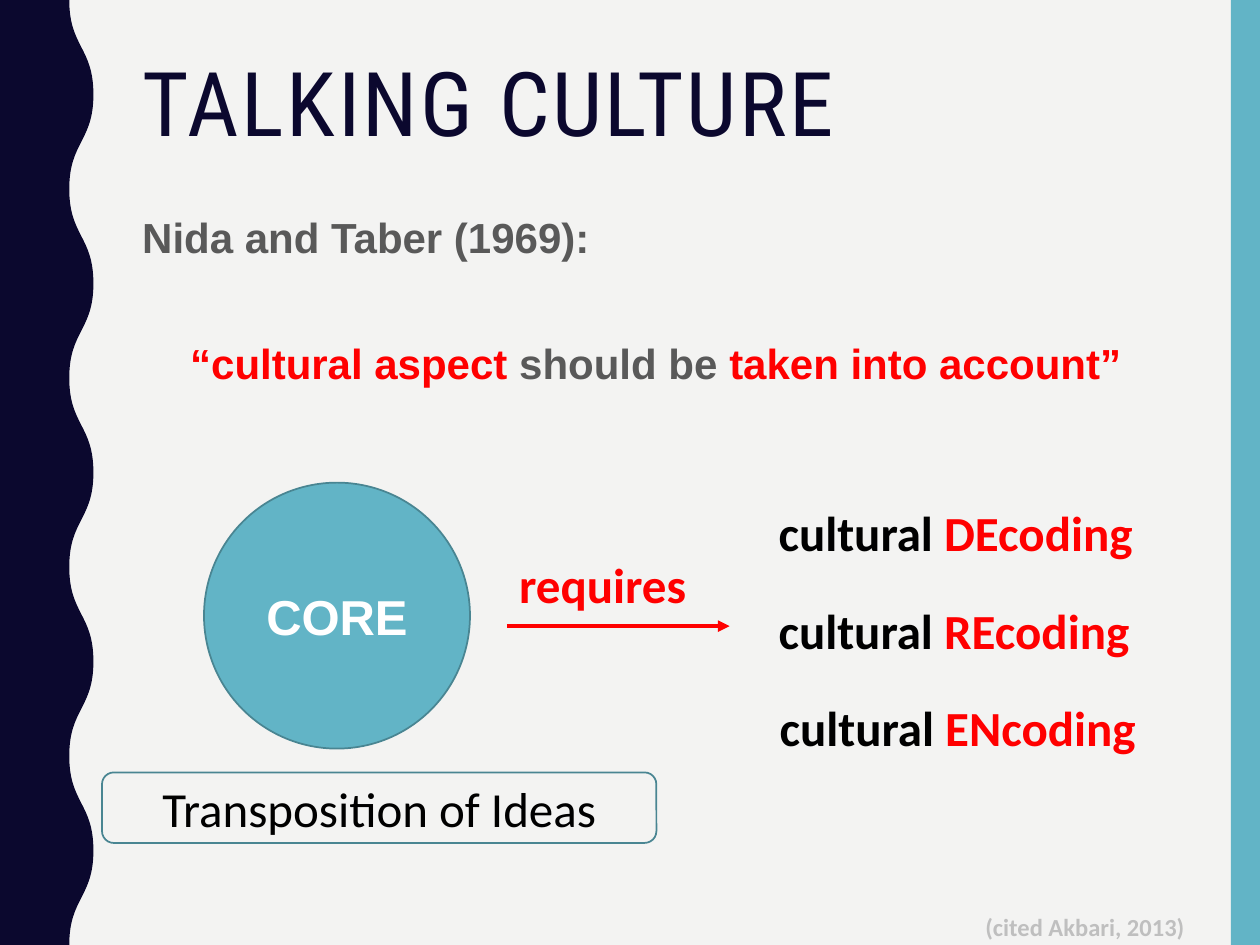
"""Build the Talking Culture slide with its wavy border and core diagram."""
from lxml import etree
from pptx import Presentation
from pptx import util as u
from pptx.dml import color
from pptx.enum import shapes, text
from pptx.oxml import ns

Pt = u.Pt
KIND = shapes.MSO_SHAPE
MID = {"alignment": text.PP_ALIGN.CENTER}
NAVY, TEAL, EDGE, RED, GREY, BLACK = "0B082E", "62B4C6", "498592", "FF0000", "595959", "000000"


def paint(part, tone):
    if hasattr(part, "solid"):
        part.solid()
        part = part.fore_color
    part.rgb = color.RGBColor.from_string(tone)


def write(para, runs, form, **style):
    for key, val in style.items():
        setattr(para, key, val)
    for words, tone in runs:
        run = para.add_run()
        run.text = words
        for key, val in form.items():
            setattr(run.font, key, val)
        paint(run.font.color, tone)


deck = Presentation()
deck.slide_width, deck.slide_height = Pt(720), Pt(540)
slide = deck.slides.add_slide(deck.slide_layouts[6])
paint(slide.background.fill, "F3F3F2")
items = slide.shapes

bar = items.add_shape(KIND.RECTANGLE, Pt(703.4), 0, Pt(16.6), Pt(540))
near, far, half = 3960, 5340, 5400
turns = [((near, far)[turn % 2], turn * half) for turn in range(11)]
pen = items.build_freeform(*turns[0], scale=Pt(1) / 100)
pen.add_line_segments(turns[1:] + [(0, 10 * half), (0, 0)], close=True)
wave = pen.convert_to_shape()
sides = list(wave._element.iter(ns.qn("a:lnTo")))
for side, start, end in zip(sides, turns, turns[1:]):
    mid = (start[1] + end[1]) // 2
    curve = etree.Element(ns.qn("a:cubicBezTo"))
    for x, y in ((start[0], mid), (end[0], mid), end):
        etree.SubElement(curve, ns.qn("a:pt"), x=str(x), y=str(y))
    side.getparent().replace(side, curve)
for part, tone in ((bar, TEAL), (wave, NAVY)):
    part.shadow.inherit = False
    paint(part.fill, tone)
    part.line.fill.background()

bold = {"name": "Calibri", "size": Pt(28), "bold": True}
arial = {"name": "Arial", "size": Pt(24), "bold": True}

title = items.add_textbox(Pt(74.2), Pt(30.2), Pt(601), Pt(117.4)).text_frame
title.word_wrap = True
write(title.paragraphs[0], [("TALKING CULTURE", NAVY)],
      {"name": "Roboto Condensed", "size": Pt(51)}, line_spacing=0.9)
title.paragraphs[0].runs[0].font._element.set("spc", "150")

body = items.add_textbox(Pt(74.2), Pt(114.5), Pt(601), Pt(283)).text_frame
body.word_wrap = True
write(body.paragraphs[0], [("Nida and Taber (1969):", GREY)], arial, line_spacing=1.1)
quote = [("“cultural aspect", RED), (" should be ", GREY), ("taken into account”", RED)]
write(body.add_paragraph(), quote, arial, line_spacing=1.1, space_before=Pt(40.6), **MID)

forms = [
    (KIND.OVAL, (116.6, 275.8, 152, 152), TEAL, ("CORE", "FFFFFF"),
     {**arial, "size": Pt(28)}),
    (KIND.ROUNDED_RECTANGLE, (58.3, 441.4, 316.8, 40.3), None,
     ("Transposition of Ideas", BLACK), {**bold, "bold": False}),
]
for kind, box, fill, run, form in forms:
    shape = items.add_shape(kind, *map(Pt, box))
    shape.shadow.inherit = False
    if fill:
        paint(shape.fill, fill)
    else:
        shape.fill.background()
    paint(shape.line.fill, EDGE)
    shape.line.width = Pt(1)
    shape.text_frame.vertical_anchor = text.MSO_ANCHOR.MIDDLE
    write(shape.text_frame.paragraphs[0], [run], form, **MID)

arrow = items.add_connector(shapes.MSO_CONNECTOR.STRAIGHT,
                            Pt(289.6), Pt(357.8), Pt(416.9), Pt(357.8))
paint(arrow.line.fill, RED)
arrow.line.width = Pt(2.25)
etree.SubElement(arrow.line._get_or_add_ln(), ns.qn("a:tailEnd"), type="triangle")
etree.SubElement(arrow._element.spPr, ns.qn("a:effectLst"))

notes = [((289.6, 313.2, 116, 41), [("requires", RED)], bold)]
rows = (("DE", 437.8, 255.6), ("RE", 437.8, 252.7), ("EN", 438.5, 257))
for row, (stem, left, wide) in enumerate(rows):
    notes.append(((left, 283.7 + 55.8 * row, wide, 41),
                  [("cultural ", BLACK), (stem + "coding", RED)], bold))
notes.append(((556, 517.7, 139.7, 24.5), [("(cited Akbari, 2013)", "BFBFBF")],
              {**bold, "size": Pt(14)}))
for box, runs, form in notes:
    frame = items.add_textbox(*map(Pt, box)).text_frame
    frame.word_wrap = False
    frame.auto_size = text.MSO_AUTO_SIZE.SHAPE_TO_FIT_TEXT
    write(frame.paragraphs[0], runs, form)

deck.save("out.pptx")
